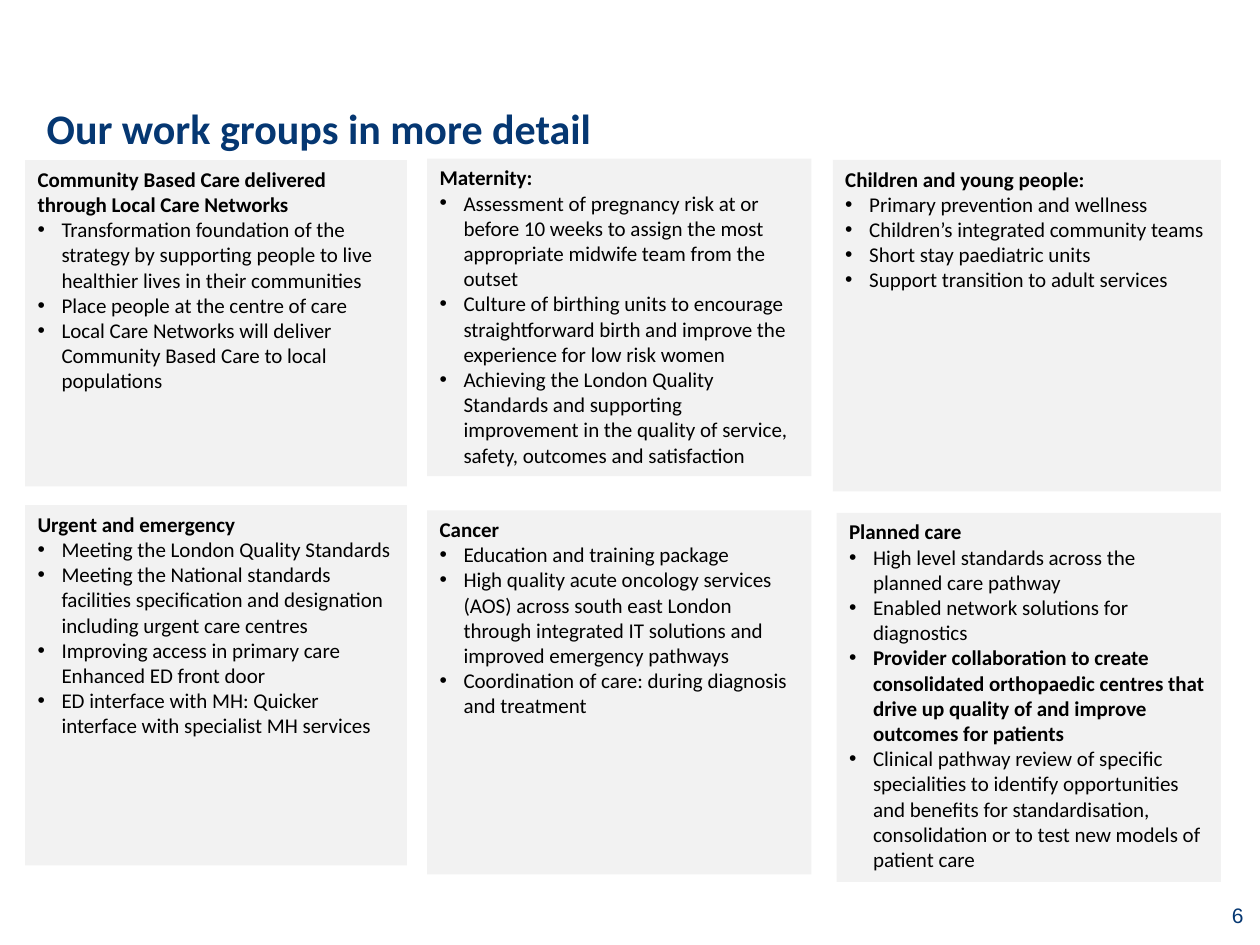
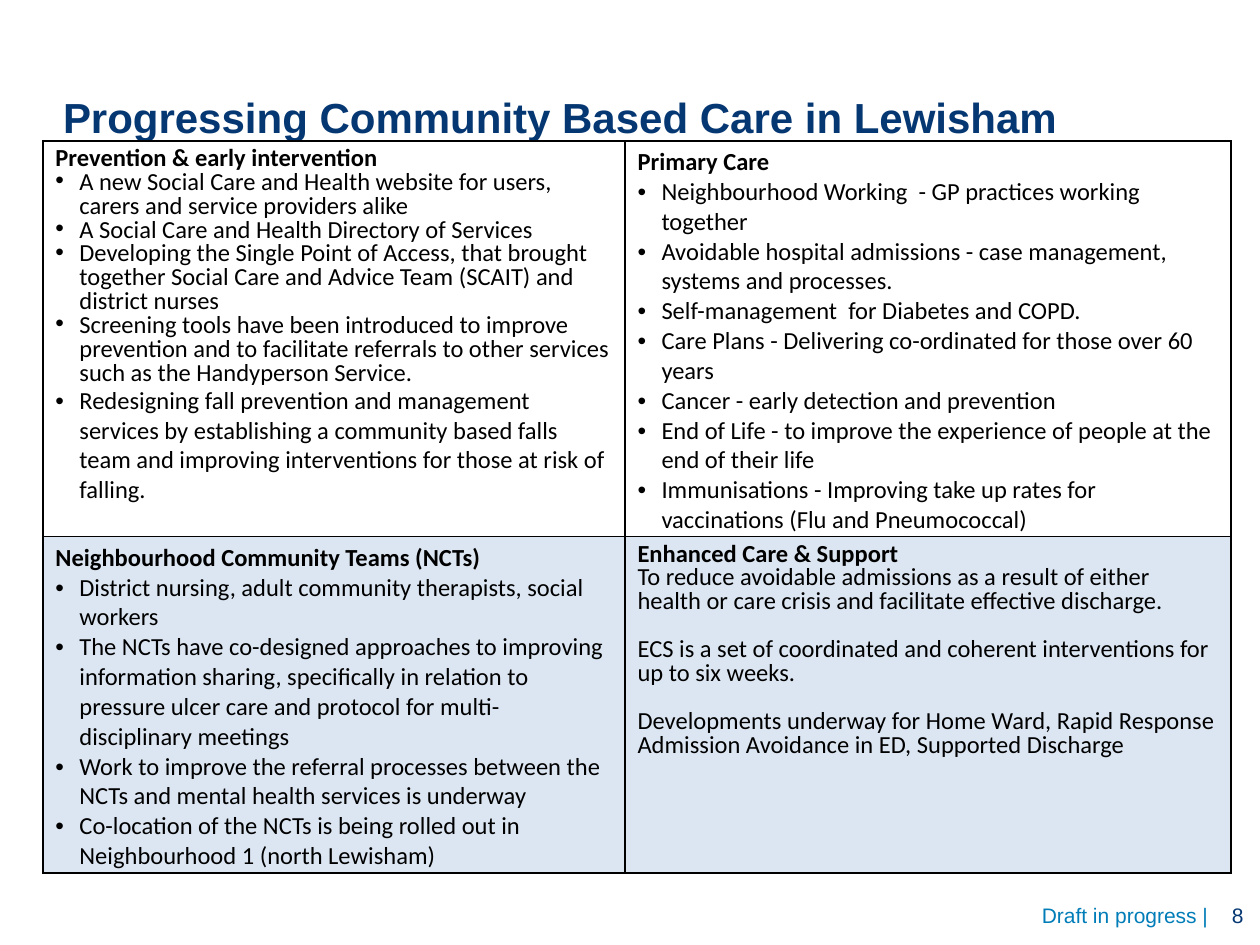
import pptx
import pptx.dml.color
import pptx.enum.text
import pptx.oxml
import pptx.oxml.ns
import pptx.util
from pptx.util import Inches

COLOURS = {"navy": "053772", "blue": "007DB8", "black": "000000", "panel": "F2F2F2", "row": "DCE6F2"}
BODY_FONT, FOOTER_FONT = "Calibri", "Arial"
ALIGN = pptx.enum.text.PP_ALIGN
ANCHOR = pptx.enum.text.MSO_ANCHOR
TITLE_ONLY = 5
HEADING_SIZE, PANEL_SIZE, CELL_SIZE, FOOTER_SIZE = 24, 12, 14, 12
TIGHT = 0.8
BLANK_LINE = 13.7

WORK_GROUPS = [
    ((0.2, 1.27, 3.03, 2.59), "Community Based Care delivered through Local Care Networks", [
        "Transformation foundation of the strategy by supporting people to live healthier lives in their communities",
        "Place people at the centre of care",
        "Local Care Networks will deliver Community Based Care to local populations"]),
    ((3.39, 1.26, 3.05, 2.52), "Maternity:", [
        "Assessment of pregnancy risk at or before 10 weeks to assign the most appropriate midwife team "
        "from the outset",
        "Culture of birthing units to encourage straightforward birth and improve the experience for low risk women",
        "Achieving the London Quality Standards and supporting improvement in the quality of service, safety, "
        "outcomes and satisfaction"]),
    ((6.61, 1.27, 3.08, 2.63), "Children and young people:", [
        "Primary prevention and wellness",
        "Children’s integrated community teams",
        "Short stay paediatric units",
        "Support transition to adult services"]),
    ((0.2, 4.01, 3.03, 2.86), "Urgent and emergency", [
        "Meeting the London Quality Standards",
        "Meeting the National standards facilities specification and designation including urgent care centres",
        "Improving access in primary care Enhanced ED front door",
        "ED interface with MH: Quicker interface with specialist MH services"]),
    ((3.39, 4.05, 3.05, 2.89), "Cancer", [
        "Education and training package",
        "High quality acute oncology services (AOS) across south east London through integrated IT solutions "
        "and improved emergency pathways",
        "Coordination of care: during diagnosis and treatment"]),
    ((6.64, 4.07, 3.05, 2.93), "Planned care", [
        "High level standards across the planned care pathway",
        "Enabled network solutions for diagnostics",
        "Provider collaboration to create consolidated orthopaedic centres that drive up quality of and improve "
        "outcomes for patients",
        "Clinical pathway review of specific specialities to identify opportunities and benefits for "
        "standardisation, consolidation or to test new models of patient care"]),
]
KEY_WORK = {"Provider collaboration"}

PREVENTION = ("Prevention & early intervention", [
    "A new Social Care and Health website for users, carers and service providers alike",
    "A Social Care and Health Directory of Services",
    "Developing the Single Point of Access, that brought together Social Care and Advice Team (SCAIT) "
    "and district nurses",
    "Screening tools have been introduced to improve prevention and to facilitate referrals to other services "
    "such as the Handyperson Service."])
FALLS = ("Redesigning fall prevention and management services by establishing a community based falls team "
         "and improving interventions for those at risk of falling.")
PRIMARY_CARE = ("Primary Care", [
    "Neighbourhood Working  - GP practices working together",
    "Avoidable hospital admissions - case management, systems and processes.",
    "Self-management  for Diabetes and COPD.",
    "Care Plans - Delivering co-ordinated for those over 60 years",
    "Cancer - early detection and prevention",
    "End of Life - to improve the experience of people at the end of their life",
    "Immunisations - Improving take up rates for vaccinations (Flu and Pneumococcal)"])
COMMUNITY_TEAMS = ("Neighbourhood Community Teams (NCTs)", [
    "District nursing, adult community therapists, social workers",
    "The NCTs have co-designed approaches to improving information sharing, specifically in relation to "
    "pressure ulcer care and protocol for multi-disciplinary meetings",
    "Work to improve the referral processes between the NCTs and mental health services is underway",
    "Co-location of the NCTs is being rolled out in Neighbourhood 1 (north Lewisham)"])
ENHANCED_CARE = ("Enhanced Care & Support", [
    "To reduce avoidable admissions as a result of either health or care crisis and facilitate effective discharge.",
    "ECS is a set of coordinated and coherent interventions for up to six weeks.",
    "Developments underway for Home Ward, Rapid Response Admission Avoidance in ED, Supported Discharge"])


def colour(name):
    """Return the named colour."""
    return pptx.dml.color.RGBColor.from_string(COLOURS[name])


def inches(box):
    """Convert a left, top, width, height box to lengths."""
    return [Inches(length) for length in box]


def format_paragraph(paragraph, size, colour_name, font_name=BODY_FONT, bold=False):
    """Set the font of a whole paragraph."""
    paragraph.font.name = font_name
    paragraph.font.size = pptx.util.Pt(size)
    paragraph.font.bold = bold
    paragraph.font.color.rgb = colour(colour_name)


def add_bullet(paragraph):
    """Give a paragraph a hanging round bullet."""
    properties = paragraph._p.get_or_add_pPr()
    properties.set("marL", str(Inches(0.19)))
    properties.set("indent", str(-Inches(0.19)))
    namespace = pptx.oxml.ns.nsdecls("a")
    properties.append(pptx.oxml.parse_xml(f'<a:buFont {namespace} typeface="Arial"/>'))
    properties.append(pptx.oxml.parse_xml(f'<a:buChar {namespace} char="•"/>'))


def write_item(text_frame, text, size, bold=False, bullet=True, spacing=1.0, before=0):
    """Append one paragraph, filling the first one if it is empty."""
    first = text_frame.paragraphs[0]
    paragraph = text_frame.add_paragraph() if first.runs else first
    paragraph.text = text
    paragraph.alignment = ALIGN.LEFT
    paragraph.line_spacing = spacing
    paragraph.space_before = pptx.util.Pt(before)
    if bullet:
        add_bullet(paragraph)
    format_paragraph(paragraph, size, "black", bold=bold)


def write_list(text_frame, heading, items, size, spacing=1.0):
    """Write a bold heading and its bulleted items."""
    write_item(text_frame, heading, size, bold=True, bullet=False, spacing=spacing)
    for item in items:
        write_item(text_frame, item, size, bold=item.startswith(tuple(KEY_WORK)), spacing=spacing)


def add_titled_slide(presentation, title, box, font_name, number):
    """Add a slide with its title and page number."""
    slide = presentation.slides.add_slide(presentation.slide_layouts[TITLE_ONLY])
    shape = slide.shapes.title
    shape.left, shape.top, shape.width, shape.height = inches(box)
    text_frame = shape.text_frame
    text_frame.text = title
    text_frame.word_wrap = True
    text_frame.auto_size = pptx.enum.text.MSO_AUTO_SIZE.NONE
    text_frame.vertical_anchor = ANCHOR.BOTTOM
    paragraph = text_frame.paragraphs[0]
    paragraph.alignment = ALIGN.LEFT
    paragraph.line_spacing = pptx.util.Pt(56)
    format_paragraph(paragraph, HEADING_SIZE, "navy", font_name, bold=True)
    add_footer(slide, (8.41, 7.01, 1.46, 0.35), number, "navy")
    return slide


def add_footer(slide, box, text, colour_name):
    """Add right-aligned footer text at the bottom of a box."""
    text_frame = slide.shapes.add_textbox(*inches(box)).text_frame
    text_frame.margin_left = text_frame.margin_right = 0
    text_frame.margin_top = text_frame.margin_bottom = 0
    text_frame.word_wrap = True
    text_frame.vertical_anchor = ANCHOR.BOTTOM
    paragraph = text_frame.paragraphs[0]
    paragraph.text = text
    paragraph.alignment = ALIGN.RIGHT
    format_paragraph(paragraph, FOOTER_SIZE, colour_name, FOOTER_FONT)


def add_panel(slide, box, heading, items):
    """Add a grey panel describing one work group."""
    panel = slide.shapes.add_shape(pptx.enum.shapes.MSO_SHAPE.RECTANGLE, *inches(box))
    panel.shadow.inherit = False
    panel.fill.solid()
    panel.fill.fore_color.rgb = colour("panel")
    panel.line.fill.background()
    panel.text_frame.word_wrap = True
    panel.text_frame.vertical_anchor = ANCHOR.TOP
    write_list(panel.text_frame, heading, items, PANEL_SIZE)


def add_borders(cell):
    """Draw a thin black line on each side of a cell."""
    properties = cell._tc.get_or_add_tcPr()
    for side in ("lnL", "lnR", "lnT", "lnB"):
        properties.append(pptx.oxml.parse_xml(
            f'<a:{side} {pptx.oxml.ns.nsdecls("a")} w="{pptx.util.Pt(1)}"><a:solidFill>'
            f'<a:srgbClr val="{COLOURS["black"]}"/></a:solidFill></a:{side}>'))


def add_care_table(slide, box, column_widths, row_heights):
    """Add the two by two table of community based care."""
    table = slide.shapes.add_table(2, 2, *inches(box)).table
    table.first_row = table.horz_banding = False
    for column, width in zip(table.columns, column_widths):
        column.width = Inches(width)
    for row, height in zip(table.rows, row_heights):
        row.height = Inches(height)
    for cell in table.iter_cells():
        add_borders(cell)
        cell.fill.background()
    for cell in table.rows[1].cells:
        cell.fill.solid()
        cell.fill.fore_color.rgb = colour("row")

    prevention = table.cell(0, 0).text_frame
    write_list(prevention, *PREVENTION, CELL_SIZE, TIGHT)
    write_item(prevention, FALLS, CELL_SIZE)
    write_list(table.cell(0, 1).text_frame, *PRIMARY_CARE, CELL_SIZE)
    write_list(table.cell(1, 0).text_frame, *COMMUNITY_TEAMS, CELL_SIZE)
    enhanced = table.cell(1, 1).text_frame
    heading, statements = ENHANCED_CARE
    write_list(enhanced, heading, [], CELL_SIZE, TIGHT)
    for index, statement in enumerate(statements):
        write_item(enhanced, statement, CELL_SIZE, bullet=False, spacing=TIGHT,
                   before=BLANK_LINE if index else 0)


def build_work_groups(presentation):
    """Build the slide of six work group panels."""
    slide = add_titled_slide(presentation, "Our work groups in more detail",
                             (0.27, 0.75, 9.3, 0.51), BODY_FONT, "6")
    for box, heading, items in WORK_GROUPS:
        add_panel(slide, box, heading, items)


def build_community_care(presentation):
    """Build the slide on progress in Lewisham."""
    slide = add_titled_slide(presentation, "Progressing Community Based Care in Lewisham",
                             (0.4, 0.67, 9.3, 0.51), FOOTER_FONT, "8")
    add_care_table(slide, (0.34, 1.12, 9.43, 5.81), (4.62, 4.81), (3.14, 2.67))
    add_footer(slide, (6.73, 7, 2.86, 0.36), "Draft in progress |", "blue")


def main():
    """Build and save the presentation."""
    presentation = pptx.Presentation()
    presentation.slide_width, presentation.slide_height = Inches(10), Inches(7.5)
    build_work_groups(presentation)
    build_community_care(presentation)
    presentation.save("out.pptx")


if __name__ == "__main__":
    main()
